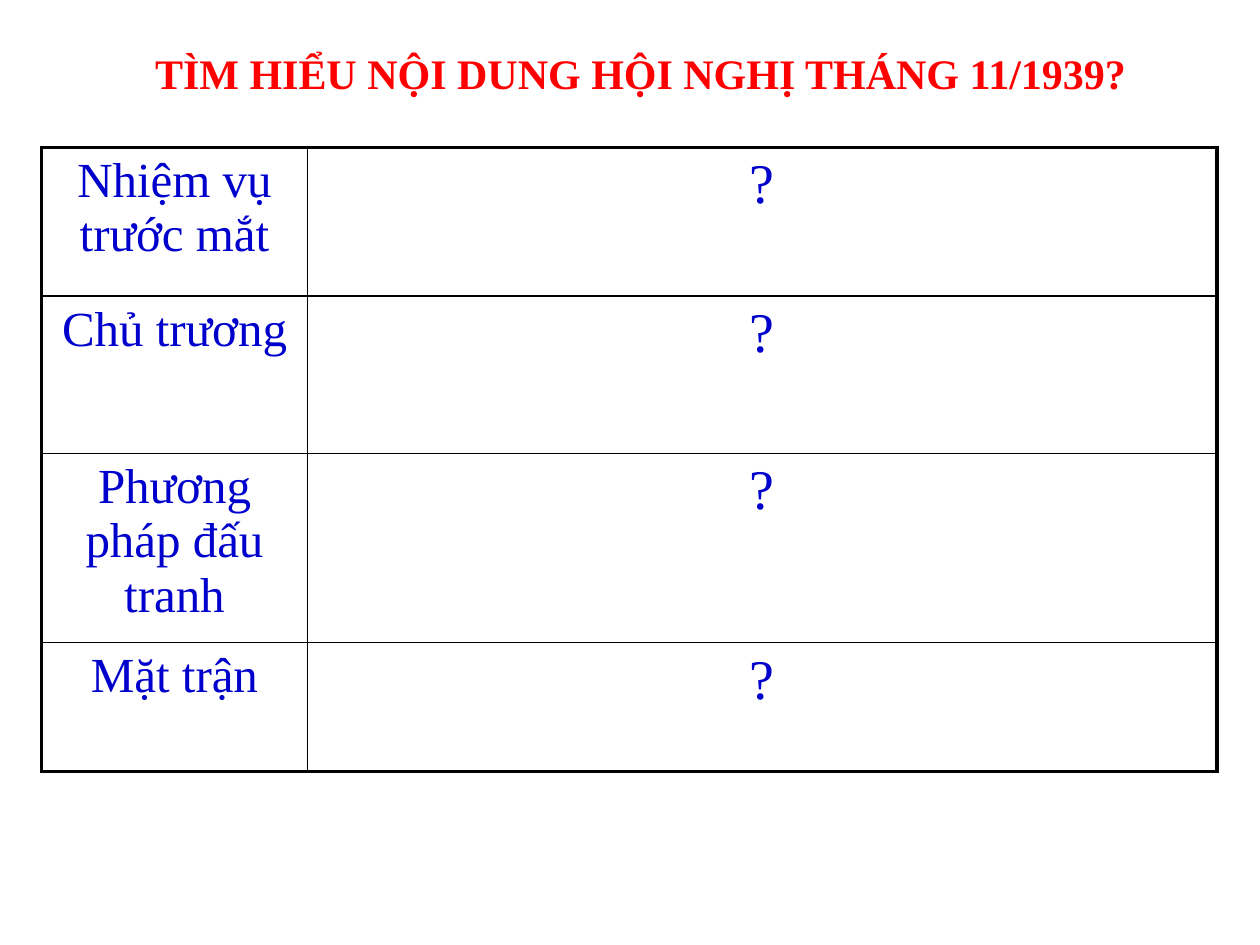
from lxml import etree
from pptx import Presentation
from pptx.dml.color import RGBColor
from pptx.enum.text import MSO_AUTO_SIZE, PP_ALIGN
from pptx.oxml.ns import qn
from pptx.util import Inches, Pt

CENTER = PP_ALIGN.CENTER
RED = RGBColor(0xFF, 0x00, 0x00)
BLUE = RGBColor(0x00, 0x00, 0xCC)
BLACK = RGBColor(0x00, 0x00, 0x00)
FONT = "Times New Roman"
THIN, THICK = Pt(1), Pt(2.25)


def write(tf, text, size, color, bold=False):
    p = tf.paragraphs[0]
    p.alignment = CENTER
    r = p.add_run()
    r.text = text
    font = {"name": FONT, "size": Pt(size), "bold": bold}
    for name, value in font.items():
        setattr(r.font, name, value)
    r.font.color.rgb = color


def set_borders(cell, widths):
    tc_pr = cell._tc.get_or_add_tcPr()
    for i, (side, width) in enumerate(widths.items()):
        ln = etree.Element(qn(f"a:{side}"), w=str(width))
        fill = etree.SubElement(ln, qn("a:solidFill"))
        etree.SubElement(fill, qn("a:srgbClr"), val=str(BLACK))
        tc_pr.insert(i, ln)  # borders come before the cell fill


prs = Presentation()
prs.slide_width, prs.slide_height = Inches(10), Inches(7.5)
s = prs.slides.add_slide(prs.slide_layouts[6])

# Title
sp = s.shapes.add_textbox(Inches(0.42), Inches(0.33), Inches(9.33), Inches(0.5))
tf = sp.text_frame
tf.word_wrap = True
tf.auto_size = MSO_AUTO_SIZE.SHAPE_TO_FIT_TEXT
write(tf, "TÌM HIỂU NỘI DUNG HỘI NGHỊ THÁNG 11/1939?", 24, RED, bold=True)

# Question table
rows = [
    ("Nhiệm vụ trước mắt", 1.18),
    ("Chủ trương", 1.25),
    ("Phương pháp đấu tranh", 1.5),
    ("Mặt trận", 1.02),
]
col_widths = [2.11, 7.22]
table = s.shapes.add_table(
    len(rows), len(col_widths), Inches(0.33), Inches(1.17),
    Inches(sum(col_widths)), Inches(sum(h for _, h in rows))).table
table.first_row = table.horz_banding = False
for col, width in zip(table.columns, col_widths):
    col.width = Inches(width)

last_row, last_col = len(rows) - 1, len(col_widths) - 1
for i, (topic, height) in enumerate(rows):
    table.rows[i].height = Inches(height)
    for j, (text, size) in enumerate([(topic, 28), ("?", 32)]):
        cell = table.cell(i, j)
        cell.fill.background()
        write(cell.text_frame, text, size, BLUE)
        # Thick frame outside, thin rules inside
        set_borders(cell, {
            "lnL": THICK if j == 0 else THIN,
            "lnR": THICK if j == last_col else THIN,
            "lnT": THICK if i == 0 else THIN,
            "lnB": THICK if i == last_row else THIN,
        })

prs.save("out.pptx")
